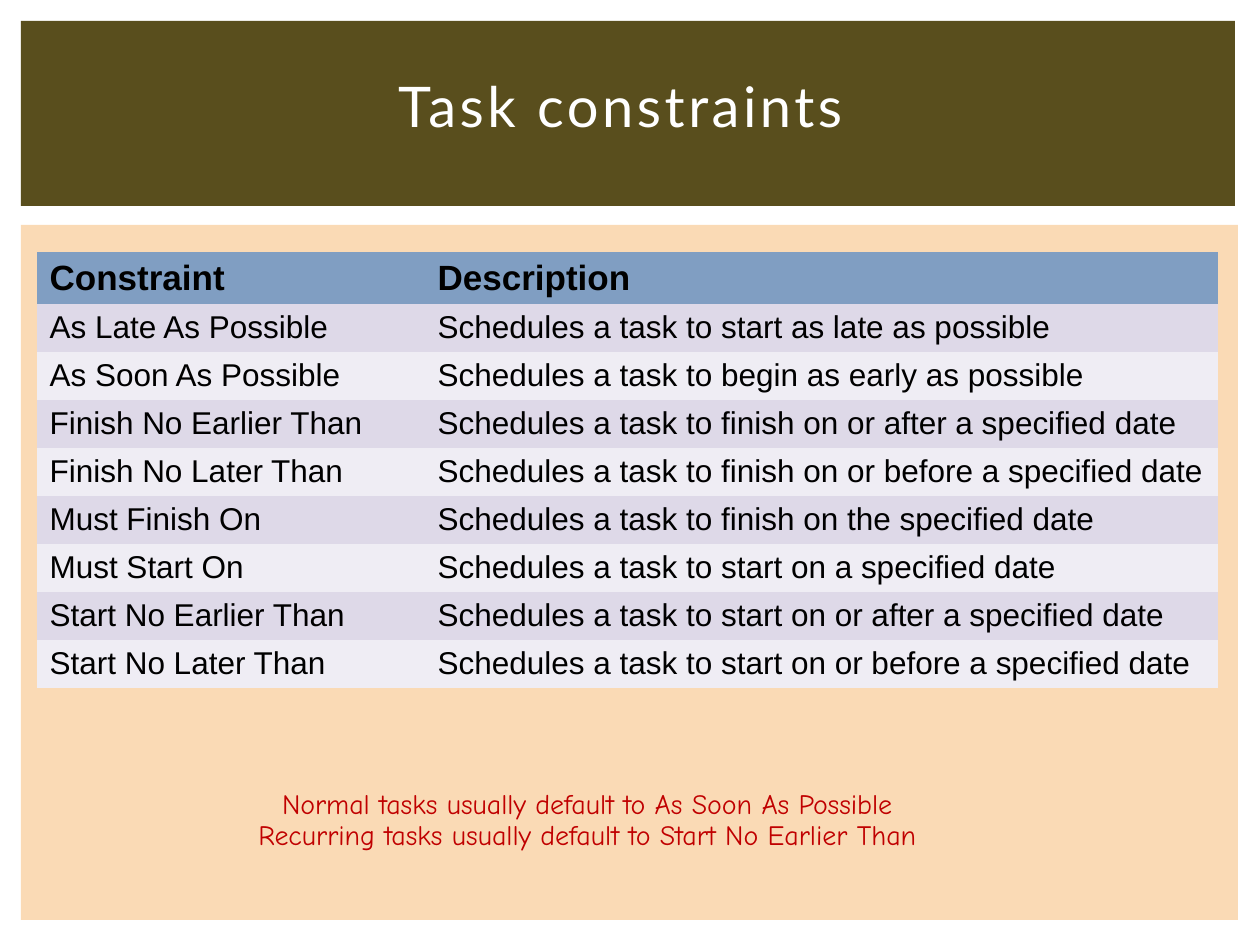
from pptx import Presentation
from pptx.dml.color import RGBColor
from pptx.enum.shapes import MSO_SHAPE
from pptx.enum.text import MSO_ANCHOR, PP_ALIGN
from pptx.oxml.ns import qn
from pptx.util import Emu, Pt

PX_PER_INCH = 126
WHITE = RGBColor(0xFF, 0xFF, 0xFF)
BLACK = RGBColor(0x00, 0x00, 0x00)
RED = RGBColor(0xC0, 0x00, 0x00)
OLIVE = RGBColor(0x59, 0x4E, 0x1D)
PEACH = RGBColor(0xFA, 0xDA, 0xB5)
BLUE = RGBColor(0x80, 0x9E, 0xC2)
LILAC = RGBColor(0xDE, 0xD9, 0xE8)
PALE_LILAC = RGBColor(0xEF, 0xED, 0xF4)

PLAIN_TABLE_STYLE = "{2D5ABB26-0587-4C30-8999-92F81FD0307C}"
TITLE_FONT = {"name": "Lato", "size": Pt(32), "bold": False}
HEADER_FONT = {"name": "Arial", "size": Pt(20), "bold": True}
BODY_FONT = {"name": "Arial", "size": Pt(18), "bold": False}
NOTE_FONT = {"name": "Comic Neue", "size": Pt(16), "bold": False}

CONSTRAINTS = [
    ("Constraint", "Description"),
    ("As Late As Possible", "Schedules a task to start as late as possible"),
    ("As Soon As Possible", "Schedules a task to begin as early as possible"),
    ("Finish No Earlier Than", "Schedules a task to finish on or after a specified date"),
    ("Finish No Later Than", "Schedules a task to finish on or before a specified date"),
    ("Must Finish On", "Schedules a task to finish on the specified date"),
    ("Must Start On", "Schedules a task to start on a specified date"),
    ("Start No Earlier Than", "Schedules a task to start on or after a specified date"),
    ("Start No Later Than", "Schedules a task to start on or before a specified date"),
]
DEFAULTS = [
    "Normal tasks usually default to As Soon As Possible",
    "Recurring tasks usually default to Start No Earlier Than",
]


def px(length):
    return Emu(round(length * 914400 / PX_PER_INCH))


def set_all(target, values):
    for name, value in values.items():
        setattr(target, name, value)


class SlideBuilder:
    def __init__(self, page):
        self.page = page

    def add_span(self, paragraph, text, font, color):
        span = paragraph.add_run()
        span.text = text
        set_all(span.font, font)
        span.font.color.rgb = color
        return span

    def band(self, left, top, width, height, color):
        band = self.page.shapes.add_shape(
            MSO_SHAPE.RECTANGLE, px(left), px(top), px(width), px(height))
        band.shadow.inherit = False
        band.fill.solid()
        band.fill.fore_color.rgb = color
        band.line.fill.background()

    def title(self, left, top, width, height, text):
        box = self.page.shapes.title
        set_all(box, {"left": px(left), "top": px(top),
                      "width": px(width), "height": px(height)})
        box.text_frame.vertical_anchor = MSO_ANCHOR.MIDDLE
        paragraph = box.text_frame.paragraphs[0]
        paragraph.alignment = PP_ALIGN.CENTER
        span = self.add_span(paragraph, text, TITLE_FONT, WHITE)
        span.font._element.set("spc", "200")
        # The title comes with the layout, so lift it above the bands.
        box._element.getparent().append(box._element)

    def table(self, left, top, widths, header_height, row_height, rows):
        heights = [header_height] + [row_height] * (len(rows) - 1)
        frame = self.page.shapes.add_table(
            len(rows), len(widths), px(left), px(top), px(sum(widths)), px(sum(heights)))
        table = frame.table
        table._tbl.tblPr.find(qn("a:tableStyleId")).text = PLAIN_TABLE_STYLE
        for column, width in zip(table.columns, widths):
            column.width = px(width)
        for index, (row, height, texts) in enumerate(zip(table.rows, heights, rows)):
            row.height = px(height)
            if index == 0:
                fill, font = BLUE, HEADER_FONT
            else:
                fill, font = (LILAC if index % 2 else PALE_LILAC), BODY_FONT
            for cell, text in zip(row.cells, texts):
                set_all(cell, {"margin_top": px(5), "margin_bottom": px(5),
                               "vertical_anchor": MSO_ANCHOR.MIDDLE})
                cell.fill.solid()
                cell.fill.fore_color.rgb = fill
                self.add_span(cell.text_frame.paragraphs[0], text, font, BLACK)

    def note(self, left, top, width, height, lines):
        box = self.page.shapes.add_textbox(px(left), px(top), px(width), px(height))
        box.text_frame.word_wrap = False
        paragraph = box.text_frame.paragraphs[0]
        set_all(paragraph, {"alignment": PP_ALIGN.CENTER, "line_spacing": Pt(18)})
        for index, line in enumerate(lines):
            if index:
                paragraph.add_line_break()
            self.add_span(paragraph, line, NOTE_FONT, RED)


def main():
    deck = Presentation()
    set_all(deck, {"slide_width": px(1260), "slide_height": px(945)})
    builder = SlideBuilder(deck.slides.add_slide(deck.slide_layouts[5]))
    builder.band(21, 225, 1217, 695, PEACH)
    builder.band(21, 21, 1214, 185, OLIVE)
    builder.title(95, 53, 1051, 105, "Task constraints")
    builder.table(37, 252, (388, 793), 52, 48, CONSTRAINTS)
    builder.note(202, 782, 771, 77, DEFAULTS)
    deck.save("out.pptx")


if __name__ == "__main__":
    main()
